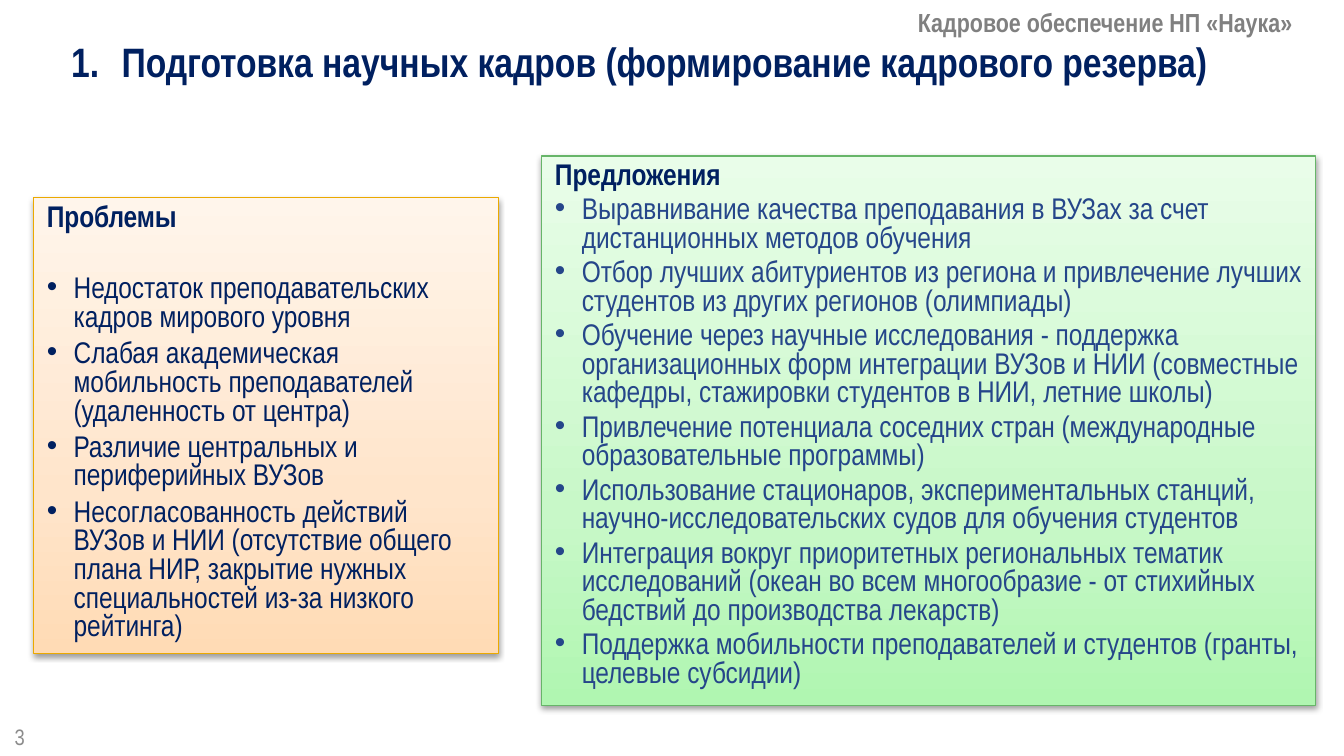
from lxml import etree
from pptx import Presentation
from pptx import util as u
from pptx.dml.color import RGBColor
from pptx.enum import shapes, text
from pptx.oxml import ns

COLORS = {
    "navy": "002060", "blue": "25468A", "gray": "808080", "number": "8C8C8C",
    "amber": "EBA900", "green": "67B569", "shadow": "000000",
}
GRADIENTS = {
    "amber": {0: "FFDBB5", 35: "FFE5CB", 100: "FFF5EB"},
    "green": {0: "B0F6B1", 35: "C8F8C8", 100: "E9FDE9"},
}
PROBLEMS = [
    "Недостаток преподавательских кадров мирового уровня",
    "Слабая академическая мобильность преподавателей (удаленность от центра)",
    "Различие центральных и периферийных ВУЗов",
    "Несогласованность действий ВУЗов и НИИ (отсутствие общего плана НИР, "
    "закрытие нужных специальностей из-за низкого рейтинга)",
]
PROPOSALS = [
    "Выравнивание качества преподавания в ВУЗах за счет дистанционных методов обучения",
    "Отбор лучших абитуриентов из региона и привлечение лучших студентов "
    "из других регионов (олимпиады)",
    "Обучение через научные исследования - поддержка организационных форм интеграции "
    "ВУЗов и НИИ (совместные кафедры, стажировки студентов в НИИ, летние школы)",
    "Привлечение потенциала соседних стран (международные образовательные программы)",
    "Использование стационаров, экспериментальных станций, "
    "научно-исследовательских судов для обучения студентов",
    "Интеграция вокруг приоритетных региональных тематик исследований (океан во всем "
    "многообразие - от стихийных бедствий до производства лекарств)",
    "Поддержка мобильности преподавателей и студентов (гранты, целевые субсидии)",
]


def apply(target, values):
    for name, value in values.items():
        setattr(target, name, value)


def add_xml(parent, tag, **attributes):
    return etree.SubElement(parent, ns.qn(tag), attributes)


class SlideBuilder:
    font = "Arial Narrow"

    def __init__(self, page):
        self.page = page

    def paragraph(self, para, content, size, color, bold=False, bullet=None, indent=0, **layout):
        """Fill one paragraph; bullet is a (tag, attributes) pair."""
        if bullet:
            tag, attributes = bullet
            properties = para._p.get_or_add_pPr()
            properties.set("marL", str(u.Pt(indent)))
            properties.set("indent", str(-u.Pt(indent)))
            add_xml(properties, "a:buFont", typeface="Arial")
            add_xml(properties, tag, **attributes)
        apply(para, layout)
        span = para.add_run()
        span.text = content
        apply(span.font, {"name": self.font, "size": u.Pt(size), "bold": bold})
        span.font.color.rgb = RGBColor.from_string(COLORS[color])

    def label(self, area, content, size, color, frame=None, **style):
        box = self.page.shapes.add_textbox(*map(u.Pt, area))
        apply(box.text_frame, {"word_wrap": True, **(frame or {})})
        self.paragraph(box.text_frame.paragraphs[0], content, size, color, **style)

    def panel(self, area, theme, heading, items, color, gap, heading_gap):
        box = self.page.shapes.add_shape(shapes.MSO_SHAPE.RECTANGLE, *map(u.Pt, area))
        # Gradient, light at the top
        box.fill.gradient()
        box.fill.gradient_angle = 90
        stops = box._element.spPr.find(".//" + ns.qn("a:gsLst"))
        stops.clear()
        for position, shade in GRADIENTS[theme].items():
            stop = add_xml(stops, "a:gs", pos=str(position * 1000))
            add_xml(stop, "a:srgbClr", val=shade)
        box.line.color.rgb = RGBColor.from_string(COLORS[theme])
        box.line.width = u.Pt(0.75)
        # Soft shadow straight below
        box.shadow.inherit = False
        effects = box._element.spPr.find(ns.qn("a:effectLst"))
        shadow = add_xml(effects, "a:outerShdw", blurRad=str(u.Pt(3.1)),
                         dist=str(u.Pt(1.6)), dir="5400000", rotWithShape="0")
        tint = add_xml(shadow, "a:srgbClr", val=COLORS["shadow"])
        add_xml(tint, "a:alpha", val="38000")
        # Heading and bullets
        frame = box.text_frame
        apply(frame, {"word_wrap": True, "vertical_anchor": text.MSO_ANCHOR.TOP})
        layout = {"alignment": text.PP_ALIGN.LEFT, "line_spacing": 0.8}
        self.paragraph(frame.paragraphs[0], heading, 16, "navy", bold=True,
                       space_after=u.Pt(heading_gap), **layout)
        for item in items:
            self.paragraph(frame.add_paragraph(), item, 16, color,
                           bullet=("a:buChar", {"char": "•"}), indent=14.4,
                           space_after=u.Pt(gap), **layout)


def main():
    deck = Presentation()
    apply(deck, {"slide_width": u.Pt(720), "slide_height": u.Pt(405)})
    builder = SlideBuilder(deck.slides.add_slide(deck.slide_layouts[6]))
    grow = {"auto_size": text.MSO_AUTO_SIZE.SHAPE_TO_FIT_TEXT}

    # Title and page number
    builder.label((31, 20.9, 671, 28.8),
                  "Подготовка научных кадров (формирование кадрового резерва)",
                  22, "navy", frame=grow, bold=True, indent=27,
                  bullet=("a:buAutoNum", {"type": "arabicPeriod"}),
                  line_spacing=0.8, space_after=u.Pt(6))
    builder.label((0.7, 383.8, 29.5, 21.6), "3", 12, "number",
                  frame={"vertical_anchor": text.MSO_ANCHOR.MIDDLE})

    # Problems and proposals
    builder.panel((18, 106, 249, 244), "amber", "Проблемы", PROBLEMS,
                  "navy", gap=4, heading_gap=23)
    builder.panel((290.2, 83.5, 414.7, 294.5), "green", "Предложения", PROPOSALS,
                  "blue", gap=3, heading_gap=3)

    # Running header
    builder.label((484.6, 2.2, 231, 21.6), "Кадровое обеспечение НП «Наука»",
                  14, "gray", frame=grow, bold=True,
                  line_spacing=0.85, space_after=u.Pt(2))
    deck.save("out.pptx")


if __name__ == "__main__":
    main()
